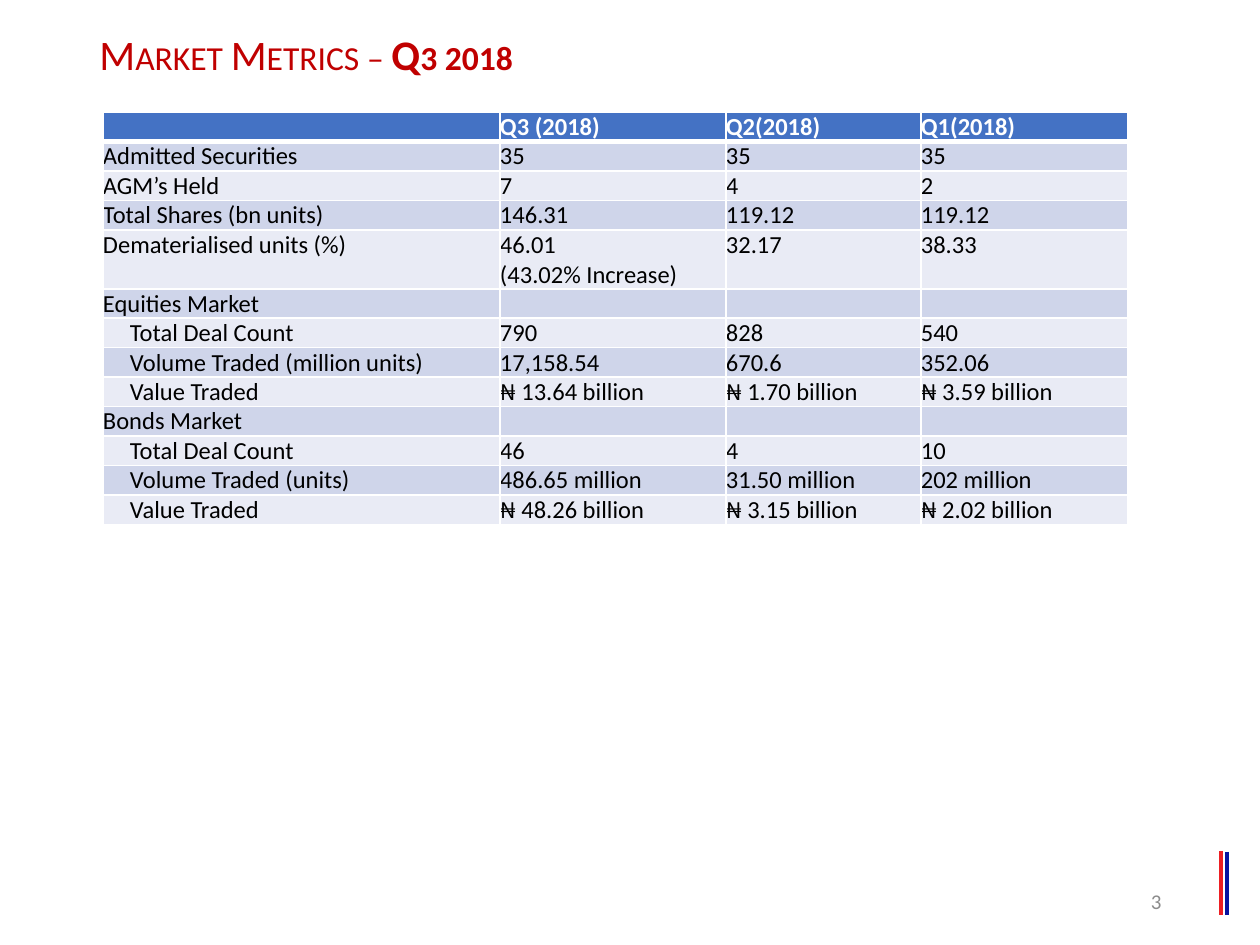
"""Build the Q3 2018 market metrics slide."""
import pptx
import pptx.dml.color
import pptx.enum.shapes
import pptx.enum.text
import pptx.oxml
import pptx.oxml.ns
import pptx.util
from lxml import etree

RED = pptx.dml.color.RGBColor(0xC0, 0x00, 0x00)
GREY = pptx.dml.color.RGBColor(0x8C, 0x8C, 0x8C)
WHITE = pptx.dml.color.RGBColor(0xFF, 0xFF, 0xFF)
BLACK = pptx.dml.color.RGBColor(0x00, 0x00, 0x00)
HEADER_BLUE = pptx.dml.color.RGBColor(0x44, 0x72, 0xC4)
DARK_BAND = pptx.dml.color.RGBColor(0xCF, 0xD5, 0xEA)
LIGHT_BAND = pptx.dml.color.RGBColor(0xE9, 0xEB, 0xF5)
RULE_RED = pptx.dml.color.RGBColor(0xED, 0x1F, 0x23)
RULE_BLUE = pptx.dml.color.RGBColor(0x08, 0x14, 0xA0)

COLUMN_WIDTHS = [397, 226, 195, 207]
ROW_HEIGHT = 29
INDENT = 27
ROWS = [
    ("", "Q3 (2018)", "Q2(2018)", "Q1(2018)"),
    ("Admitted Securities", "35", "35", "35"),
    ("AGM’s Held", "7", "4", "2"),
    ("Total Shares (bn units)", "146.31", "119.12", "119.12"),
    ("Dematerialised units (%)", "46.01\n(43.02% Increase)", "32.17", "38.33"),
    ("Equities Market", "", "", ""),
    ("Total Deal Count", "790", "828", "540"),
    ("Volume Traded (million units)", "17,158.54", "670.6", "352.06"),
    ("Value Traded", "₦ 13.64 billion", "₦ 1.70 billion", "₦ 3.59 billion"),
    ("Bonds Market", "", "", ""),
    ("Total Deal Count", "46", "4", "10"),
    ("Volume Traded (units)", "486.65 million", "31.50 million", "202 million"),
    ("Value Traded", "₦ 48.26 billion", "₦ 3.15 billion", "₦ 2.02 billion"),
]
INDENTED_LABELS = ("Total Deal", "Volume", "Value")


def px(length):
    return pptx.util.Emu(round(length * 914400 / 126))


def style_paragraph(paragraph, size, color, bold=None):
    paragraph.font.name = "Calibri"
    paragraph.font.size = pptx.util.Pt(size)
    paragraph.font.color.rgb = color
    paragraph.font.bold = bold


presentation = pptx.Presentation()
presentation.slide_width = px(1260)
presentation.slide_height = px(945)
slide = presentation.slides.add_slide(presentation.slide_layouts[6])

for x, top, color in ((1221, 851, RULE_RED), (1227, 852, RULE_BLUE)):
    rule = slide.shapes.add_connector(
        pptx.enum.shapes.MSO_CONNECTOR.STRAIGHT, px(x), px(top), px(x), px(915))
    rule.line.color.rgb = color
    rule.line.width = pptx.util.Pt(2)
    etree.SubElement(rule._element.spPr, pptx.oxml.ns.qn("a:effectLst"))

title = slide.shapes.add_textbox(px(87), px(15), px(927), px(83))
title.text_frame.word_wrap = True
title.text_frame.vertical_anchor = pptx.enum.text.MSO_ANCHOR.MIDDLE
paragraph = title.text_frame.paragraphs[0]
paragraph.line_spacing = 0.9
style_paragraph(paragraph, 24, RED)
for text, bold in (("Market Metrics – ", False), ("Q3 2018", True)):
    run = paragraph.add_run()
    run.text = text
    run.font.bold = bold
    run._r.get_or_add_rPr().set("cap", "small")

page_number = slide.shapes.add_textbox(px(890), px(876), px(284), px(50))
page_number.text_frame.word_wrap = True
page_number.text_frame.vertical_anchor = pptx.enum.text.MSO_ANCHOR.MIDDLE
paragraph = page_number.text_frame.paragraphs[0]
paragraph.text = "3"
paragraph.alignment = pptx.enum.text.PP_ALIGN.RIGHT
style_paragraph(paragraph, 12, GREY)

line_counts = [max(text.count("\n") + 1 for text in row) for row in ROWS]
table = slide.shapes.add_table(
    len(ROWS), len(COLUMN_WIDTHS), px(103), px(112),
    px(sum(COLUMN_WIDTHS)), px(ROW_HEIGHT * sum(line_counts))).table
table.horz_banding = False
for column, width in zip(table.columns, COLUMN_WIDTHS):
    column.width = px(width)

for row_index, row in enumerate(ROWS):
    table.rows[row_index].height = px(ROW_HEIGHT * line_counts[row_index])
    is_header = row_index == 0
    band = HEADER_BLUE if is_header else (LIGHT_BAND, DARK_BAND)[row_index % 2]
    for column_index, text in enumerate(row):
        cell = table.cell(row_index, column_index)
        cell.margin_left = cell.margin_top = cell.margin_right = cell.margin_bottom = 0
        border_widths = {"L": 1, "R": 1, "T": 3 if row_index == 1 else 1, "B": 3 if is_header else 1}
        for side, width in border_widths.items():
            cell._tc.get_or_add_tcPr().append(pptx.oxml.parse_xml(
                f'<a:ln{side} {pptx.oxml.ns.nsdecls("a")} w="{pptx.util.Pt(width)}">'
                f'<a:solidFill><a:srgbClr val="{WHITE}"/></a:solidFill></a:ln{side}>'))
        cell.fill.solid()
        cell.fill.fore_color.rgb = band
        cell.text_frame.text = text
        for paragraph in cell.text_frame.paragraphs:
            if text.startswith(INDENTED_LABELS):
                paragraph._p.get_or_add_pPr().set("marL", str(px(INDENT)))
            style_paragraph(paragraph, 14, WHITE if is_header else BLACK, is_header)
            if not text:
                etree.SubElement(paragraph._p, pptx.oxml.ns.qn("a:endParaRPr"), sz="1400")

presentation.save("out.pptx")
